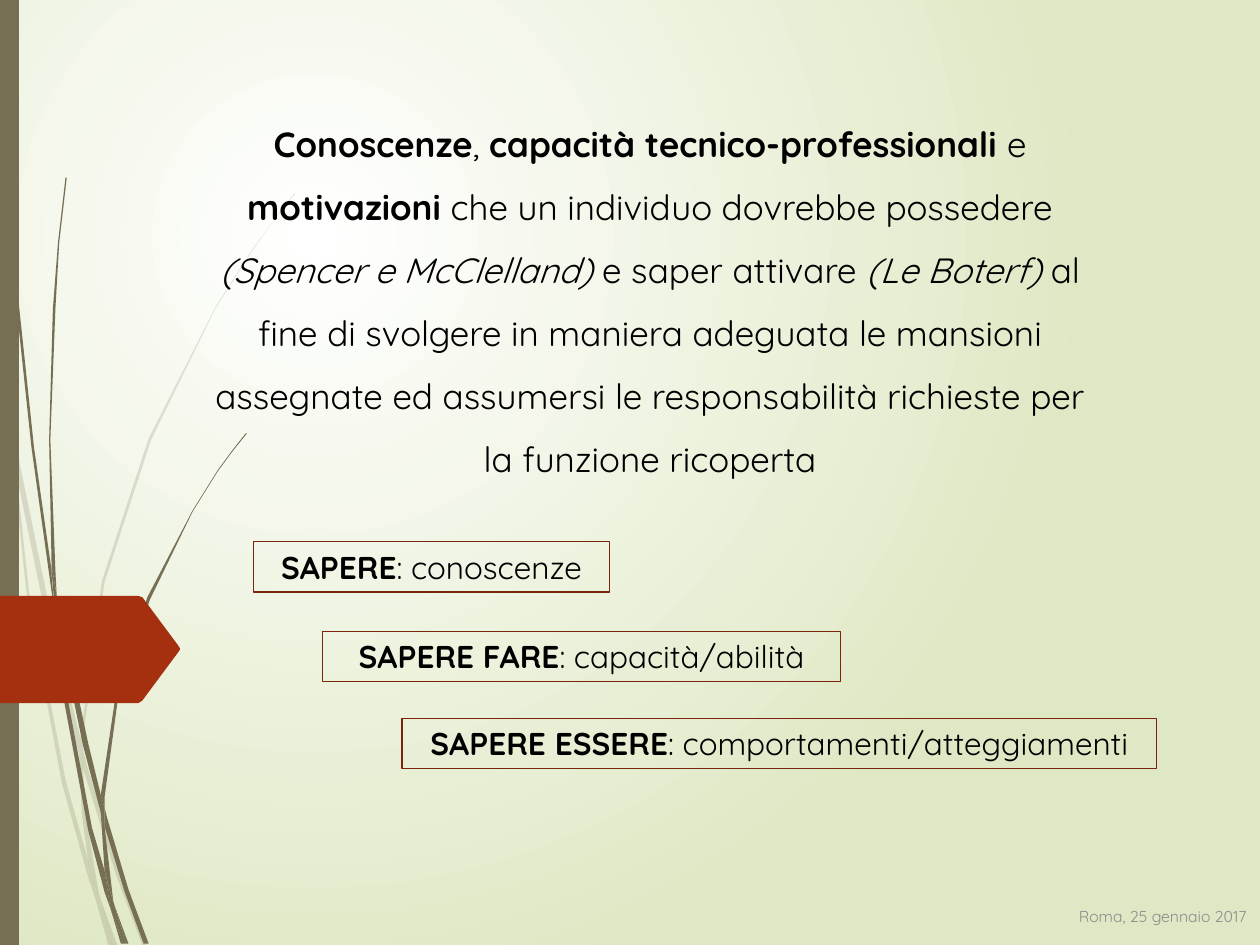
from lxml.etree import SubElement
from pptx import Presentation
from pptx.dml.color import RGBColor
from pptx.enum.shapes import MSO_SHAPE as Shape
from pptx.enum.text import MSO_ANCHOR as Anchor, PP_ALIGN as Align
from pptx.oxml.ns import qn
from pptx.util import Inches, Pt

FONT = "Quicksand"
WHITE = RGBColor(0xFF, 0xFF, 0xFF)
PALE_GREEN = RGBColor(0xDF, 0xE8, 0xC4)
OLIVE = RGBColor(0x76, 0x6F, 0x54)
RED = RGBColor(0xA5, 0x30, 0x10)
DARK_RED = RGBColor(0x7A, 0x24, 0x0C)
BLACK = RGBColor(0, 0, 0)
GRAY = RGBColor(0x8C, 0x8C, 0x8C)


def add_outline(shapes, points, color, alpha=None):
    builder = shapes.build_freeform(*points[0], scale=Inches(0.01))
    builder.add_line_segments(points[1:], close=True)
    shape = builder.convert_to_shape()
    shape.shadow.inherit = False
    shape.fill.solid()
    shape.fill.fore_color.rgb = color
    shape.line.fill.background()
    if alpha:
        rgb = shape.element.find(".//" + qn("a:srgbClr"))
        SubElement(rgb, qn("a:alpha"), val=str(alpha * 1000))


def write_runs(paragraph, runs, size, color, align):
    paragraph.alignment = align
    for text, style in runs:
        run = paragraph.add_run()
        run.text = text
        run.font.name = FONT
        run.font.size = Pt(size)
        run.font.color.rgb = color
        run.font.bold = style == "bold"
        run.font.italic = style == "italic"


presentation = Presentation()
presentation.slide_width = Inches(10)
presentation.slide_height = Inches(7.5)
slide = presentation.slides.add_slide(presentation.slide_layouts[6])
shapes = slide.shapes

background = slide.background.fill
background.gradient()
for stop, color in zip(background.gradient_stops, (WHITE, PALE_GREEN)):
    stop.color.rgb = color
gradient = slide.element.find(".//" + qn("a:gradFill"))
gradient.remove(gradient.find(qn("a:lin")))
gradient_path = SubElement(gradient, qn("a:path"), path="circle")
SubElement(gradient_path, qn("a:fillToRect"), l="50000", t="50000", r="100000", b="100000")

pale_blades = [
    [(8, 350), (6, 322), (0, 282), (0, 299), (8, 344)],
    [(43, 522), (63, 599), (64, 586), (47, 520), (11, 345), (13, 376)],
    [(69, 607), (66, 596), (66, 610), (92, 694), (113, 750), (116, 750), (95, 692)],
    [(89, 750), (93, 750), (79, 711)],
    [(70, 683), (52, 619), (23, 469), (13, 376), (8, 350), (21, 470), (49, 621),
     (69, 693), (76, 714), (74, 707)],
    [(63, 599), (65, 646), (70, 683), (72, 692), (79, 711), (78, 706), (68, 646),
     (66, 610), (66, 608)],
    [(66, 584), (83, 462), (120, 349), (171, 245), (201, 198), (217, 175), (234, 154),
     (234, 153), (217, 175), (201, 197), (171, 244), (118, 348), (81, 461), (64, 584),
     (64, 586), (66, 596)],
    [(76, 714), (86, 750), (89, 750)],
    [(66, 608), (66, 610), (66, 596), (64, 586), (63, 599)],
    [(72, 692), (70, 683), (74, 707), (76, 714), (89, 750), (79, 711)],
]
dark_blades = [
    [(5, 110), (12, 233), (25, 355), (42, 477), (43, 481), (41, 457), (41, 453),
     (27, 355), (14, 232), (6, 109), (3, 48), (3, 0), (2, 0), (3, 48)],
    [(66, 592), (80, 645), (80, 633), (80, 631), (70, 590), (45, 472), (48, 505)],
    [(85, 649), (83, 641), (83, 656), (99, 708), (114, 749), (118, 749), (102, 706)],
    [(83, 691), (73, 657), (54, 556), (48, 505), (43, 477), (51, 557), (70, 659),
     (83, 708), (88, 722), (87, 717)],
    [(45, 472), (44, 453), (40, 349), (44, 245), (47, 193), (53, 141), (52, 141),
     (46, 193), (42, 245), (39, 349), (41, 449)],
    [(100, 749), (102, 749), (91, 719)],
    [(43, 477), (48, 505), (45, 472), (41, 449), (41, 453)],
    [(83, 633), (94, 552), (119, 476), (153, 406), (173, 374), (184, 359), (196, 344),
     (195, 344), (184, 358), (173, 373), (153, 405), (117, 474), (92, 551), (80, 631),
     (83, 641)],
    [(88, 722), (96, 749), (98, 749)],
    [(80, 645), (83, 691), (87, 706), (91, 719), (90, 716), (83, 656), (81, 651)],
    [(80, 645), (81, 651), (83, 656), (83, 641), (80, 631), (80, 633)],
    [(87, 706), (83, 691), (87, 717), (88, 722), (98, 749), (100, 749), (91, 719)],
]
for blade in pale_blades:
    add_outline(shapes, blade, OLIVE, 20)
for blade in dark_blades:
    add_outline(shapes, blade, OLIVE)

side_bar = shapes.add_shape(Shape.RECTANGLE, 0, 0, Inches(0.15), Inches(7.5))
side_bar.shadow.inherit = False
side_bar.fill.solid()
side_bar.fill.fore_color.rgb = OLIVE
side_bar.line.fill.background()

page_arrow = [(0, 473), (110, 473), (113, 474), (142, 513), (143, 515), (142, 517),
              (113, 556), (110, 558), (0, 558)]
add_outline(shapes, page_arrow, RED)

footer = shapes.add_textbox(Inches(6.82), Inches(7.07), Inches(3.17), Inches(0.4))
footer.text_frame.word_wrap = True
footer.text_frame.vertical_anchor = Anchor.MIDDLE
write_runs(footer.text_frame.paragraphs[0], [("Roma, 25 gennaio 2017", None)], 9, GRAY, Align.RIGHT)

definition_runs = [
    ("Conoscenze", "bold"),
    (", ", None),
    ("capacità tecnico-professionali ", "bold"),
    ("e ", None),
    ("motivazioni", "bold"),
    (" che un individuo dovrebbe possedere ", None),
    ("(Spencer e McClelland) ", "italic"),
    ("e saper attivare ", None),
    ("(Le Boterf) ", "italic"),
    ("al fine di svolgere in maniera adeguata le mansioni assegnate ed assumersi "
     "le responsabilità richieste per la funzione ricoperta", None),
]
definition = shapes.add_textbox(Inches(1.46), Inches(0.76), Inches(7.4), Inches(3.13))
definition.text_frame.word_wrap = True
paragraph = definition.text_frame.paragraphs[0]
paragraph.line_spacing = 1.5
write_runs(paragraph, definition_runs, 20, BLACK, Align.CENTER)

competences = [
    (2.01, 4.3, 2.83, "SAPERE", "conoscenze"),
    (2.56, 5.01, 4.11, "SAPERE FARE", "capacità/abilità"),
    (3.19, 5.7, 5.99, "SAPERE ESSERE", "comportamenti/atteggiamenti"),
]
for left, top, width, name, meaning in competences:
    box = shapes.add_shape(Shape.RECTANGLE, Inches(left), Inches(top), Inches(width), Inches(0.4))
    box.shadow.inherit = False
    box.fill.background()
    box.line.color.rgb = DARK_RED
    box.line.width = Pt(0.75)
    box.text_frame.word_wrap = True
    box.text_frame.vertical_anchor = Anchor.TOP
    runs = [(name, "bold"), (f": {meaning}", None)]
    write_runs(box.text_frame.paragraphs[0], runs, 18, BLACK, Align.CENTER)

presentation.save("out.pptx")
